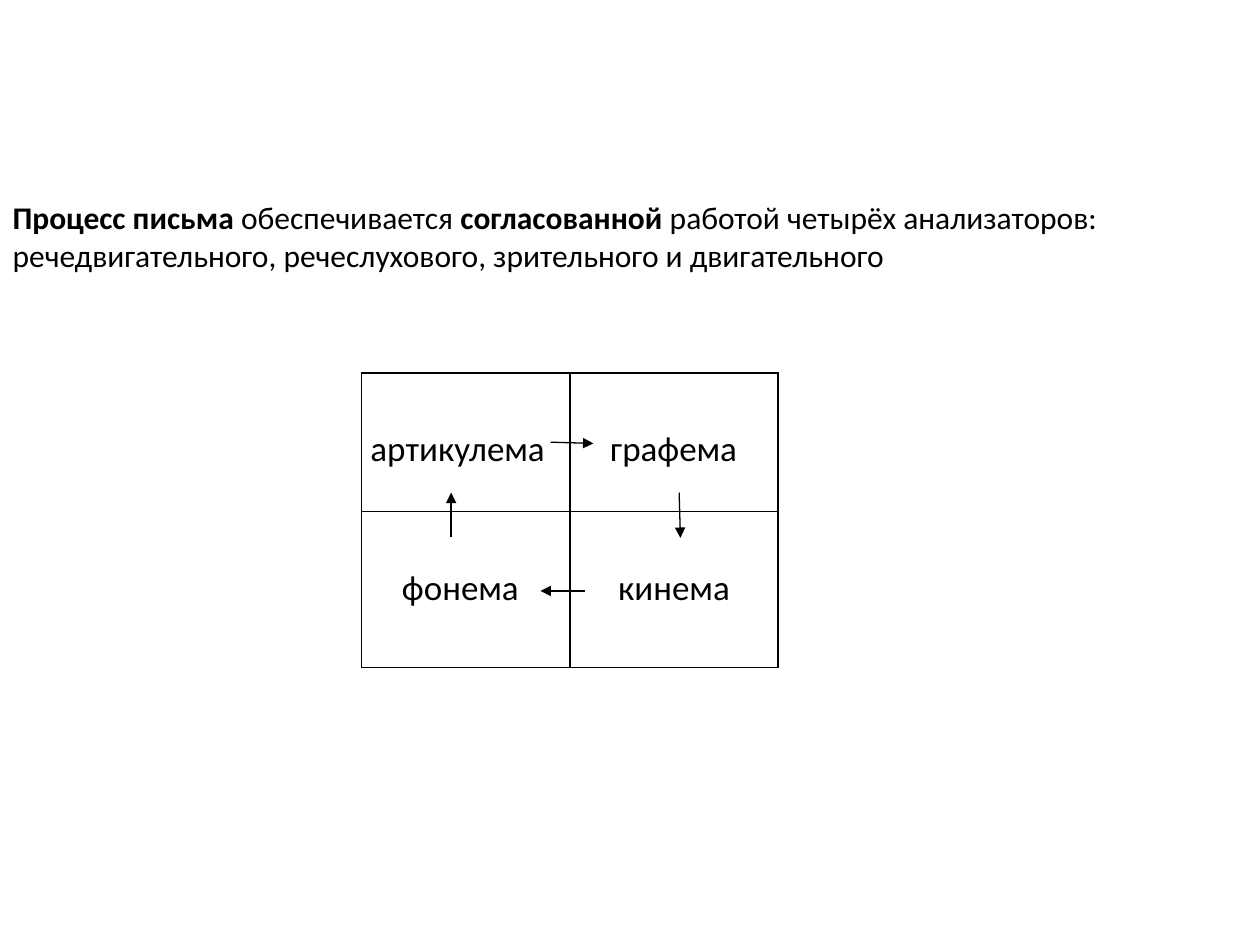
from dataclasses import dataclass

from lxml import etree
from pptx import Presentation
from pptx.dml.color import RGBColor
from pptx.enum.shapes import MSO_CONNECTOR
from pptx.enum.text import MSO_ANCHOR, PP_ALIGN
from pptx.oxml.ns import qn
from pptx.util import Pt

STRAIGHT = MSO_CONNECTOR.STRAIGHT
MIDDLE = MSO_ANCHOR.MIDDLE
LEFT = PP_ALIGN.LEFT
FONT = "Calibri"
BLACK = "000000"
CELL_MARGIN = 5
CELL_TOP = 28
COLUMN_WIDTH = 119
ROW_HEIGHTS = (79.2, 89.2)
TITLE_ONLY = 5


@dataclass(frozen=True)
class Term:
    row: int
    column: int
    text: str
    indent: float


@dataclass(frozen=True)
class Arrow:
    start_x: float
    start_y: float
    end_x: float
    end_y: float


@dataclass(frozen=True)
class Span:
    text: str
    bold: bool


TERMS = (
    Term(0, 0, "артикулема", 0),
    Term(0, 1, "графема", 18),
    Term(1, 0, "фонема", 18),
    Term(1, 1, "кинема", 22.6),
)
ARROWS = (
    Arrow(314.6, 252.7, 339.1, 253.4),
    Arrow(388.1, 281.5, 388.8, 307.4),
    Arrow(334.1, 337.7, 308.9, 337.7),
    Arrow(257.8, 306.7, 257.8, 281.5),
)
HEADING = (
    (
        Span("Процесс письма", True),
        Span(" обеспечивается ", False),
        Span("согласованной", True),
        Span(" работой четырёх анализаторов: ", False),
    ),
    (Span("речедвигательного, речеслухового, зрительного и двигательного", False),),
)


def color(value: str) -> RGBColor:
    return RGBColor.from_string(value)


def style_paragraph(para, size: float) -> None:
    para.alignment = LEFT
    para.font.name = FONT
    para.font.size = Pt(size)
    para.font.color.rgb = color(BLACK)


def add_heading(page) -> None:
    box = page.shapes.title
    box.left, box.top, box.width, box.height = Pt(0), Pt(109.4), Pt(643), Pt(51)
    frame = box.text_frame
    frame.word_wrap = False
    frame.vertical_anchor = MIDDLE
    para = frame.paragraphs[0]
    style_paragraph(para, 18)
    for number, line in enumerate(HEADING):
        if number:
            para.add_line_break()
        for span in line:
            run = para.add_run()
            run.text = span.text
            run.font.bold = span.bold


def add_borders(cell) -> None:
    properties = cell._tc.get_or_add_tcPr()
    for position, side in enumerate(("lnL", "lnR", "lnT", "lnB")):
        border = etree.Element(qn(f"a:{side}"), w=str(Pt(1)))
        fill = etree.SubElement(border, qn("a:solidFill"))
        etree.SubElement(fill, qn("a:srgbClr"), val=BLACK)
        properties.insert(position, border)


def add_term(table, term: Term) -> None:
    cell = table.cell(term.row, term.column)
    cell.fill.background()
    cell.margin_left = Pt(CELL_MARGIN + term.indent)
    cell.margin_right = Pt(CELL_MARGIN)
    cell.margin_top = Pt(CELL_TOP)
    cell.margin_bottom = Pt(0)
    para = cell.text_frame.paragraphs[0]
    para.text = term.text
    para.line_spacing = 1.15
    style_paragraph(para, 20)
    add_borders(cell)


def add_term_table(page) -> None:
    frame = page.shapes.add_table(
        2, 2, Pt(206.7), Pt(213.1), Pt(2 * COLUMN_WIDTH), Pt(sum(ROW_HEIGHTS))
    )
    table = frame.table
    table.first_row = False
    table.horz_banding = False
    for column in table.columns:
        column.width = Pt(COLUMN_WIDTH)
    for row, height in zip(table.rows, ROW_HEIGHTS):
        row.height = Pt(height)
    for term in TERMS:
        add_term(table, term)


def add_arrow(page, arrow: Arrow) -> None:
    connector = page.shapes.add_connector(
        STRAIGHT, Pt(arrow.start_x), Pt(arrow.start_y), Pt(arrow.end_x), Pt(arrow.end_y)
    )
    connector.line.color.rgb = color(BLACK)
    connector.line.width = Pt(0.75)
    line = connector.line._get_or_add_ln()
    etree.SubElement(line, qn("a:tailEnd"), type="triangle")
    etree.SubElement(connector._element.spPr, qn("a:effectLst"))


def main() -> None:
    deck = Presentation()
    deck.slide_width, deck.slide_height = Pt(720), Pt(540)
    page = deck.slides.add_slide(deck.slide_layouts[TITLE_ONLY])
    add_term_table(page)
    for arrow in ARROWS:
        add_arrow(page, arrow)
    add_heading(page)
    deck.save("out.pptx")


if __name__ == "__main__":
    main()
